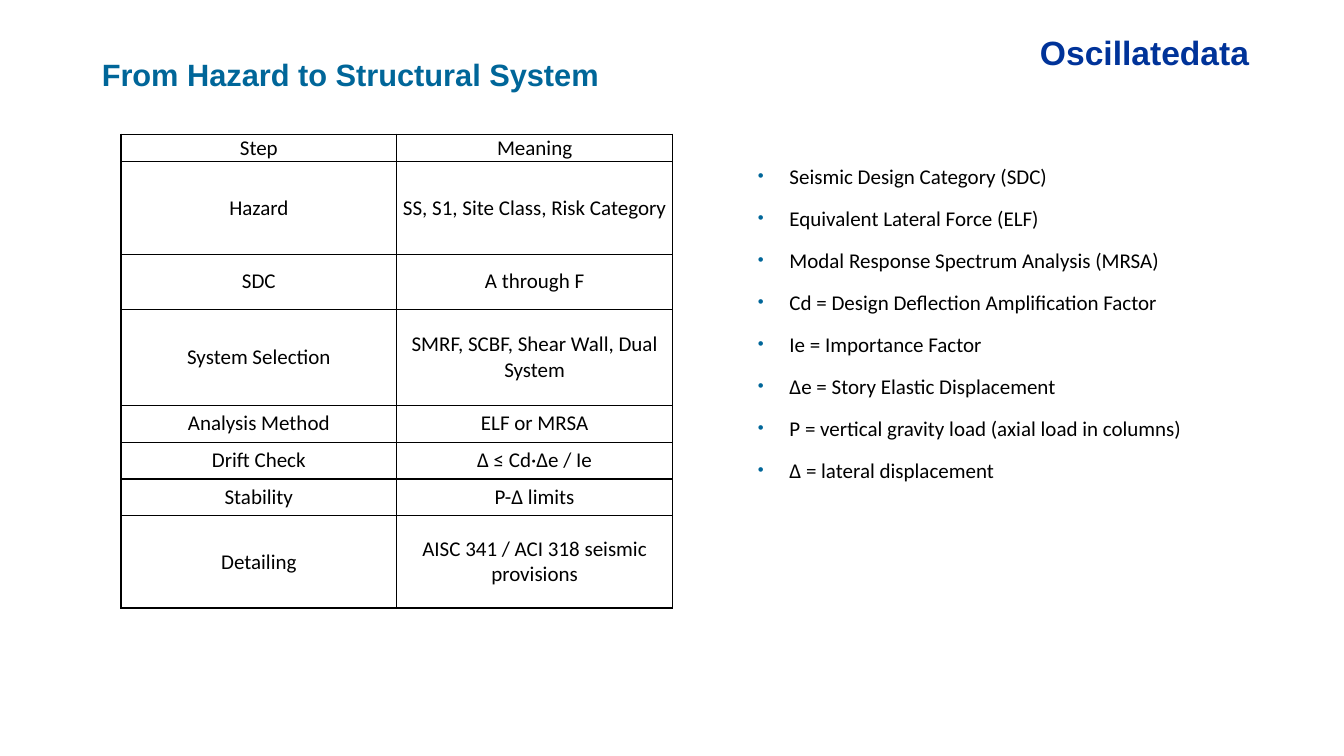
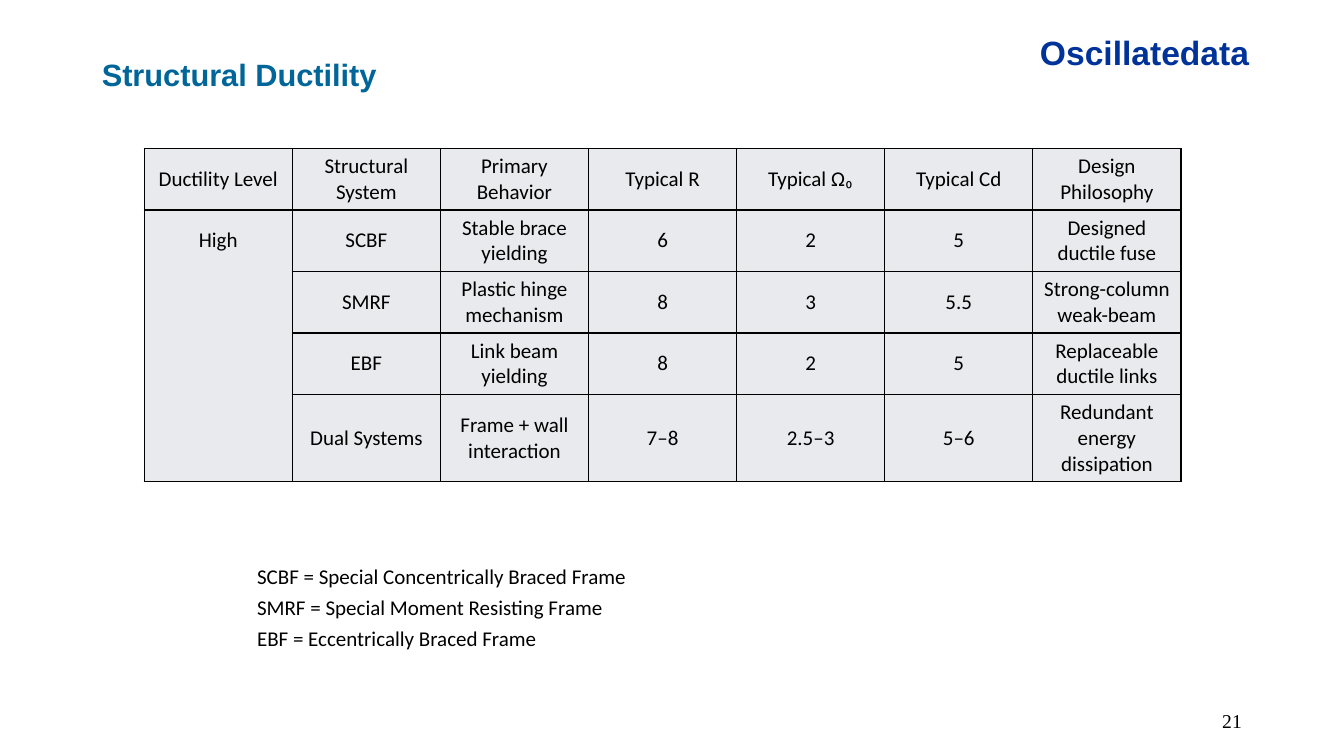
"""Build two slides on seismic structural systems, each with a table and a list."""
from lxml import etree
from pptx import Presentation
from pptx.dml.color import RGBColor
from pptx.enum.text import MSO_ANCHOR, MSO_AUTO_SIZE, PP_ALIGN
from pptx.oxml.ns import qn
from pptx.util import Pt

LEFT, CENTER, RIGHT = PP_ALIGN.LEFT, PP_ALIGN.CENTER, PP_ALIGN.RIGHT
TOP, MIDDLE = MSO_ANCHOR.TOP, MSO_ANCHOR.MIDDLE
NO_FIT = MSO_AUTO_SIZE.NONE
NAVY, TEAL, BLACK, GREY = "003399", "006699", "000000", "E8EAED"

SLIDES = [
    {
        "title": "From Hazard to Structural System",
        "table_at": (86.4, 95.8),
        "col_width": 197,
        "row_heights": [18.5, 66, 39.5, 68.5, 26.3, 26.3, 26.3, 66],
        "margins": (0.7, 0.7),
        "fill": None,
        "open_rows": [],
        "rows": [
            ["Step", "Meaning"],
            ["Hazard", "SS, S1, Site Class, Risk Category"],
            ["SDC", "A through F"],
            ["System Selection", "SMRF, SCBF, Shear Wall, Dual System"],
            ["Analysis Method", "ELF or MRSA"],
            ["Drift Check", "Δ ≤ Cd·Δe / Ie"],
            ["Stability", "P-Δ limits"],
            ["Detailing", "AISC 341 / ACI 318 seismic provisions"],
        ],
        "list_at": (534.2, 113, 340, 238),
        "list_gap": 6,
        "bullets": True,
        "list": [
            "Seismic Design Category (SDC)",
            "Equivalent Lateral Force (ELF)",
            "Modal Response Spectrum Analysis (MRSA)",
            "Cd = Design Deflection Amplification Factor",
            "Ie = Importance Factor",
            "Δe = Story Elastic Displacement",
            "P = vertical gravity load (axial load in columns)",
            "Δ = lateral displacement",
        ],
        "number": None,
    },
    {
        "title": "Structural Ductility",
        "table_at": (103, 106),
        "col_width": 105.8,
        "row_heights": [43.4, 43.4, 43.4, 43.4, 61.6],
        "margins": (7.2, 3.6),
        "fill": GREY,
        "open_rows": [1, 2, 3],
        "rows": [
            ["Ductility Level", "Structural System", "Primary Behavior", "Typical R",
             "Typical Ω₀", "Typical Cd", "Design Philosophy"],
            ["High", "SCBF", "Stable brace yielding", "6", "2", "5", "Designed ductile fuse"],
            ["", "SMRF", "Plastic hinge mechanism", "8", "3", "5.5",
             "Strong-column weak-beam"],
            ["", "EBF", "Link beam yielding", "8", "2", "5", "Replaceable ductile links"],
            ["", "Dual Systems", "Frame + wall interaction", "7–8", "2.5–3", "5–6",
             "Redundant energy dissipation"],
        ],
        "list_at": (176.4, 399, 501, 70),
        "list_gap": 2,
        "bullets": False,
        "list": [
            "SCBF = Special Concentrically Braced Frame",
            "SMRF = Special Moment Resisting Frame",
            "EBF = Eccentrically Braced Frame",
        ],
        "number": "21",
    },
]


def rgb(value):
    return RGBColor.from_string(value)


def write(p, text, size=15, font="Calibri", color=BLACK, bold=False, align=LEFT):
    p.alignment = align
    r = p.add_run()
    r.text = text
    r.font.size = Pt(size)
    r.font.name = font
    r.font.bold = bold
    r.font.color.rgb = rgb(color)


prs = Presentation()
prs.slide_width, prs.slide_height = Pt(960), Pt(540)

for data in SLIDES:
    s = prs.slides.add_slide(prs.slide_layouts[1])
    title, body = s.shapes.title, s.placeholders[1]
    brand = s.shapes.add_textbox(0, 0, 0, 0)
    boxes = [(title, (65.5, 36, 600, 34), TOP),
             (body, data["list_at"], TOP),
             (brand, (735.8, 19.4, 180, 36), TOP)]
    if data["number"]:
        number = s.shapes.add_textbox(0, 0, 0, 0)
        boxes.append((number, (678.2, 500.4, 216, 28.8), MIDDLE))
        write(number.text_frame.paragraphs[0], data["number"], 14, "Times New Roman",
              "010000", align=RIGHT)

    for sp, at, anchor in boxes:
        sp.left, sp.top, sp.width, sp.height = [Pt(v) for v in at]
        tf = sp.text_frame
        tf.word_wrap = True
        tf.auto_size = NO_FIT
        tf.vertical_anchor = anchor

    write(title.text_frame.paragraphs[0], data["title"], 22, "Arial", TEAL, True)
    write(brand.text_frame.paragraphs[0], "Oscillatedata", 24, "Arial", NAVY, True)

    tf = body.text_frame
    indent = Pt(22.5) if data["bullets"] else 0
    for i, text in enumerate(data["list"]):
        p = tf.add_paragraph() if i else tf.paragraphs[0]
        pPr = p._p.get_or_add_pPr()
        pPr.set("marL", str(indent))
        pPr.set("indent", str(-indent))
        if data["bullets"]:
            clr = etree.SubElement(pPr, qn("a:buClr"))
            etree.SubElement(clr, qn("a:srgbClr"), val=TEAL)
            etree.SubElement(pPr, qn("a:buSzPct"), val="80000")
            etree.SubElement(pPr, qn("a:buFont"), typeface="Arial")
            etree.SubElement(pPr, qn("a:buChar"), char="•")
        else:
            etree.SubElement(pPr, qn("a:buNone"))
        p.space_before = Pt(data["list_gap"] if i else 0)
        p.space_after = Pt(data["list_gap"])
        write(p, text)

    rows, heights = data["rows"], data["row_heights"]
    n_cols = len(rows[0])
    left, top = data["table_at"]
    tbl = s.shapes.add_table(len(rows), n_cols, Pt(left), Pt(top),
                             Pt(data["col_width"] * n_cols), Pt(sum(heights))).table
    tbl.first_row = tbl.horz_banding = False
    for col in tbl.columns:
        col.width = Pt(data["col_width"])
    margin_x, margin_y = data["margins"]
    for i, row in enumerate(rows):
        tbl.rows[i].height = Pt(heights[i])
        for j, text in enumerate(row):
            cell = tbl.cell(i, j)
            cell.vertical_anchor = MIDDLE
            cell.margin_left = cell.margin_right = Pt(margin_x)
            cell.margin_top = cell.margin_bottom = Pt(margin_y)
            hidden = set()
            if j == 0 and i in data["open_rows"]:
                hidden.add("lnB")
            if j == 0 and i - 1 in data["open_rows"]:
                hidden.add("lnT")
            tcPr = cell._tc.get_or_add_tcPr()
            for side in ("lnL", "lnR", "lnT", "lnB"):
                ln = etree.SubElement(tcPr, qn("a:" + side), w=str(Pt(1)))
                if side in hidden:
                    etree.SubElement(ln, qn("a:noFill"))
                else:
                    line = etree.SubElement(ln, qn("a:solidFill"))
                    etree.SubElement(line, qn("a:srgbClr"), val=BLACK)
            if data["fill"]:
                cell.fill.solid()
                cell.fill.fore_color.rgb = rgb(data["fill"])
            else:
                cell.fill.background()
            if text:
                write(cell.text_frame.paragraphs[0], text, align=CENTER)

prs.save("out.pptx")
